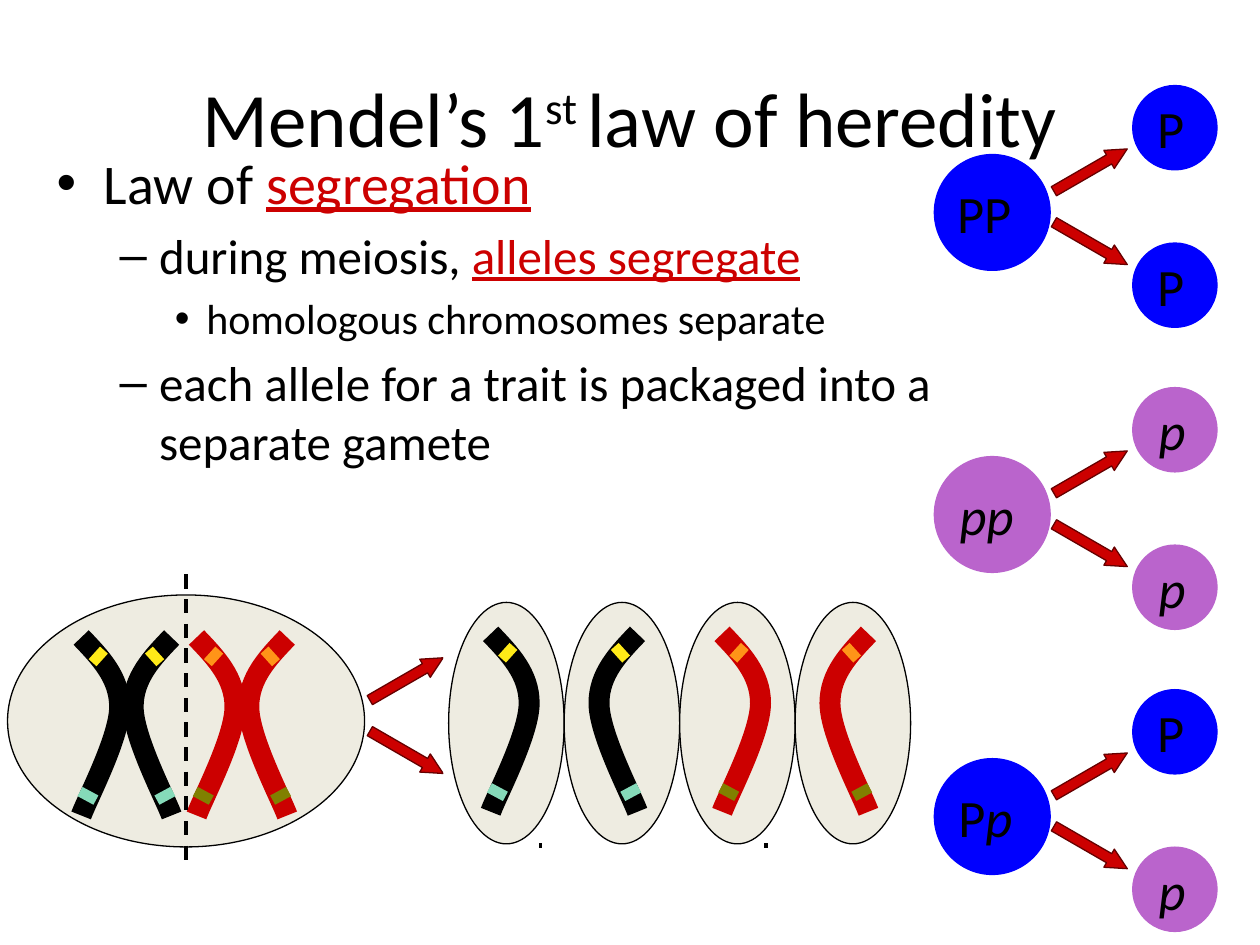
from dataclasses import dataclass

from lxml.etree import SubElement
from pptx import Presentation
from pptx.dml.color import RGBColor
from pptx.enum.dml import MSO_LINE
from pptx.enum.shapes import MSO_CONNECTOR, MSO_SHAPE
from pptx.enum.text import MSO_ANCHOR, MSO_AUTO_SIZE
from pptx.oxml.ns import qn
from pptx.util import Pt


@dataclass(frozen=True)
class Theme:
    font: str = "Calibri"
    ink: str = "000000"
    paper: str = "FFFFFF"
    red: str = "CC0000"
    edge: str = "660000"
    cell: str = "EEECE1"
    blue: str = "0000FF"
    violet: str = "BA64CC"
    yellow: str = "FFEA18"
    orange: str = "FF9418"
    mint: str = "85DAB9"
    olive: str = "808000"
    title: float = 44
    label: float = 30
    levels: tuple = (32, 28, 24)


@dataclass(frozen=True)
class Strand:
    tip: float
    top: float
    side: int
    dark: bool


@dataclass(frozen=True)
class Cross:
    parent: str
    upper: str
    lower: str


@dataclass(frozen=True)
class Item:
    level: int
    text: str
    key: str = ""


LOOK = Theme()
CROSSES = [Cross("PP", "P", "P"), Cross("pp", "p", "p"), Cross("Pp", "P", "p")]
ITEMS = [
    Item(0, "Law of ", "segregation"),
    Item(1, "during meiosis, ", "alleles segregate"),
    Item(2, "homologous chromosomes separate"),
    Item(1, "each allele for a trait is packaged into a separate gamete"),
]
PARENT = [Strand(98.1, 364.3, -1, True), Strand(46.4, 364.3, 1, True),
          Strand(164.2, 364.3, -1, False), Strand(112.3, 364.3, 1, False)]
GAMETES = [Strand(280.4, 362.2, 1, True), Strand(364.3, 362.2, -1, True),
           Strand(412.6, 362.2, 1, False), Strand(496.3, 362.2, -1, False)]
CURVES = [((11, 11.5), (22, 23), (22, 39.6)),
          ((22, 57), (3.8, 91.5), (0, 101.7))]


def style(run, size: float, color: str = LOOK.ink) -> None:
    run.font.name = LOOK.font
    run.font.size = Pt(size)
    run.font.color.rgb = RGBColor.from_string(color)


def place(shape, left: float, top: float, width: float, height: float) -> None:
    shape.left, shape.top = Pt(left), Pt(top)
    shape.width, shape.height = Pt(width), Pt(height)


def block(shapes, kind: MSO_SHAPE, area: tuple, fill: str, line: str = ""):
    shape = shapes.add_shape(kind, *map(Pt, area))
    shape.shadow.inherit = False
    shape.fill.solid()
    shape.fill.fore_color.rgb = RGBColor.from_string(fill)
    if line:
        shape.line.color.rgb = RGBColor.from_string(line)
        shape.line.width = Pt(0.75)
    else:
        shape.line.fill.background()
    return shape


def stroke(shapes, start: tuple, end: tuple, color: str, width: float,
           dashed: bool = False) -> None:
    line = shapes.add_connector(MSO_CONNECTOR.STRAIGHT, *map(Pt, start + end))
    line.line.color.rgb = RGBColor.from_string(color)
    line.line.width = Pt(width)
    if dashed:
        line.line.dash_style = MSO_LINE.DASH
    SubElement(line._element.spPr, qn("a:effectLst"))


def arrows(shapes, left: float, top: float) -> None:
    for drop, turn in ((41.9, 30), (0, 330)):
        arrow = block(shapes, MSO_SHAPE.RIGHT_ARROW, (left, top + drop, 48.4, 12),
                      LOOK.red, LOOK.edge)
        arrow.adjustments[0], arrow.adjustments[1] = 0.5, 1
        arrow.rotation = turn


def allele(shapes, x: float, y: float, size: float, text: str) -> None:
    color = LOOK.blue if "P" in text else LOOK.violet
    block(shapes, MSO_SHAPE.OVAL, (x - size / 2, y - size / 2, size, size),
          color, color)
    width = 14.4 + sum(20 if char == "P" else 18.5 for char in text)
    box = shapes.add_textbox(Pt(x - width / 2), Pt(y - 21.5), Pt(width), Pt(43.2))
    frame = box.text_frame
    frame.word_wrap = False
    frame.auto_size = MSO_AUTO_SIZE.SHAPE_TO_FIT_TEXT
    frame.vertical_anchor = MSO_ANCHOR.MIDDLE
    for part in (text,) if len(set(text)) == 1 else text:
        run = frame.paragraphs[0].add_run()
        run.text = part
        style(run, LOOK.label)
        run.font.italic = part.islower()


def strand(shapes, item: Strand) -> None:
    def spot(x: float, y: float) -> tuple:
        return item.tip + item.side * x, item.top + y

    pen = shapes.build_freeform(Pt(item.tip), Pt(item.top))
    ends = [spot(*points[-1]) for points in CURVES]
    pen.add_line_segments([(Pt(x), Pt(y)) for x, y in ends], close=False)
    body = pen.convert_to_shape()
    left = min(item.tip, ends[0][0])
    for points, node in zip(CURVES, list(body._element.iter(qn("a:lnTo")))):
        node.tag = qn("a:cubicBezTo")
        node.remove(node[0])
        for point in points:
            x, y = spot(*point)
            SubElement(node, qn("a:pt"), x=str(Pt(x - left)), y=str(Pt(y - item.top)))
    body.shadow.inherit = False
    body.fill.background()
    body.line.color.rgb = RGBColor.from_string(LOOK.ink if item.dark else LOOK.red)
    body.line.width = Pt(12)
    upper, lower = (LOOK.yellow, LOOK.mint) if item.dark else (LOOK.orange, LOOK.olive)
    stroke(shapes, spot(13, 7.2), spot(6.5, 14.4), upper, 6)
    stroke(shapes, spot(8.4, 92.9), spot(-0.7, 88), lower, 6)


def heading(title) -> None:
    place(title, 36, 21.6, 648, 90)
    line = title.text_frame.paragraphs[0]
    for text, base in (("Mendel’s 1", 0), ("st ", 30000), ("law of heredity", 0)):
        run = line.add_run()
        run.text = text
        style(run, LOOK.title)
        if base:
            run._r.get_or_add_rPr().set("baseline", str(base))


def outline(body) -> None:
    place(body, 25.2, 81, 590.4, 218.2)
    frame = body.text_frame
    frame.auto_size = MSO_AUTO_SIZE.NONE
    for index, item in enumerate(ITEMS):
        line = frame.add_paragraph() if index else frame.paragraphs[0]
        line.text = item.text
        line.level = item.level
        if item.level == 2:
            props = line._p.get_or_add_pPr()
            props.set("marL", str(Pt(85.5)))
            props.set("indent", str(Pt(-18)))
        size = LOOK.levels[item.level]
        style(line.runs[0], size)
        if item.key:
            run = line.add_run()
            run.text = item.key
            style(run, size, LOOK.red)
            run.font.underline = True


def main() -> None:
    deck = Presentation()
    deck.slide_width, deck.slide_height = Pt(720), Pt(540)
    slide = deck.slides.add_slide(deck.slide_layouts[1])
    shapes = slide.shapes
    heading(shapes.title)
    outline(slide.placeholders[1])

    for row, cross in enumerate(CROSSES):
        mid = 121.4 + 172.6 * row
        group = shapes.add_group_shape().shapes
        allele(group, 567, mid, 66.2, cross.parent)
        allele(group, 671.4, mid - 48.4, 48.2, cross.upper)
        allele(group, 671.4, mid + 41.6, 48.2, cross.lower)
        arrows(group, 599, mid - 30.2)

    group = shapes.add_group_shape().shapes
    block(group, MSO_SHAPE.OVAL, (4.3, 340, 204, 144), LOOK.cell, LOOK.ink)
    for item in PARENT:
        strand(group, item)
    arrows(shapes.add_group_shape().shapes, 208.1, 382)

    for x in (308.9, 437.8):
        stroke(shapes, (x, 321.8), (x, 490.3), LOOK.ink, 2, dashed=True)
    group = shapes.add_group_shape().shapes
    block(group, MSO_SHAPE.RECTANGLE, (253.4, 313.9, 275.8, 167.8), LOOK.paper)
    for index, item in enumerate(GAMETES):
        cell = block(group, MSO_SHAPE.OVAL, (220.4 + 66 * index, 380.2, 138, 66),
                     LOOK.cell, LOOK.ink)
        cell.rotation = 270
        strand(group, item)
    stroke(shapes, (106.4, 328.3), (106.4, 496.1), LOOK.ink, 2, dashed=True)
    deck.save("out.pptx")


if __name__ == "__main__":
    main()
